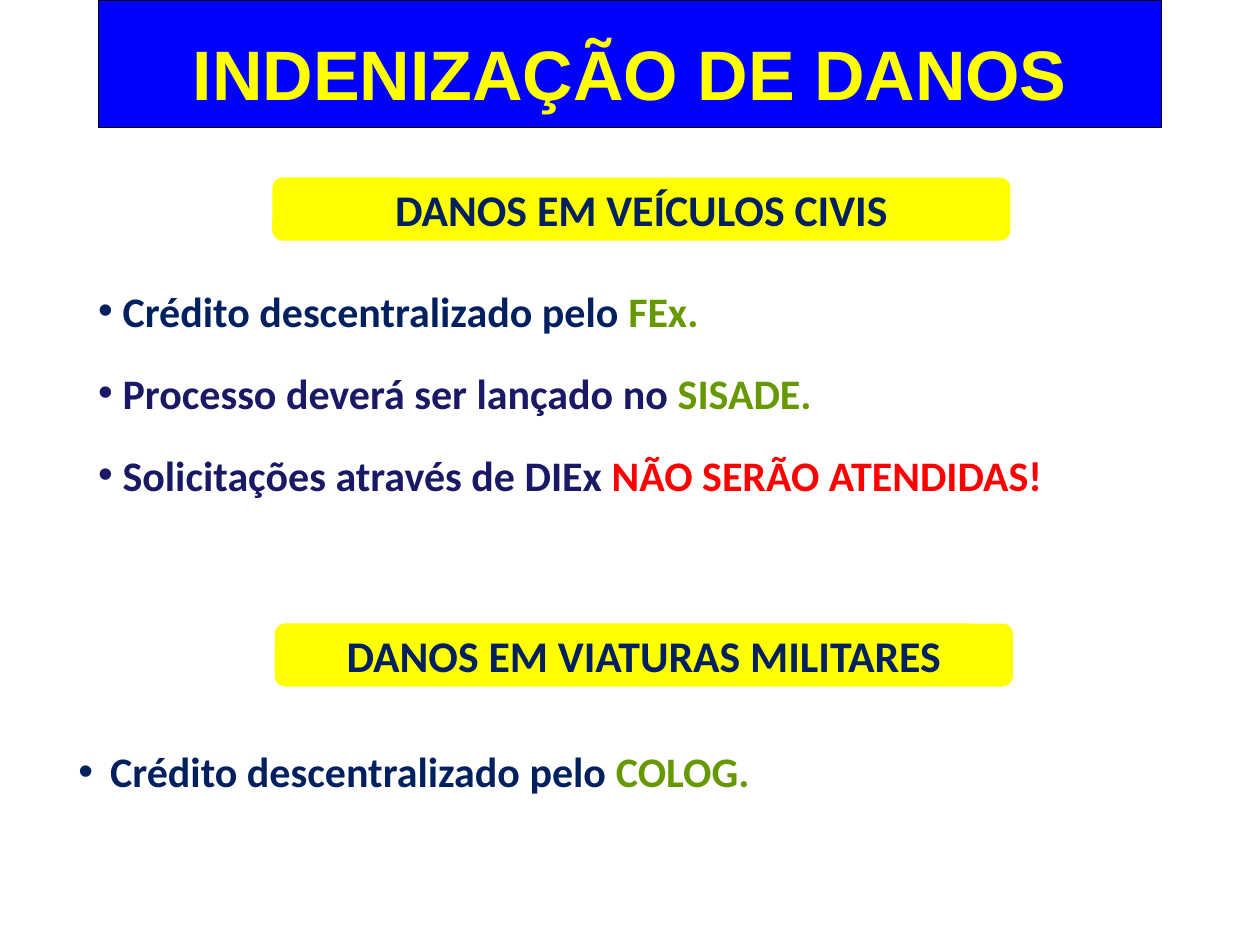
from pptx import Presentation
from pptx.dml.color import RGBColor
from pptx.enum.shapes import MSO_SHAPE
from pptx.enum.text import MSO_ANCHOR, MSO_AUTO_SIZE, PP_ALIGN
from pptx.util import Cm, Pt

BLUE = RGBColor(0x00, 0x00, 0xFF)
BLACK = RGBColor(0x00, 0x00, 0x00)
YELLOW = RGBColor(0xFF, 0xFF, 0x00)
NAVY = RGBColor(0x00, 0x20, 0x60)
INDIGO = RGBColor(0x19, 0x19, 0x66)
GREEN = RGBColor(0x66, 0x99, 0x00)
RED = RGBColor(0xFF, 0x00, 0x00)

CIVILIAN_ITEMS = [
    [("Crédito descentralizado pelo ", NAVY), ("FEx.", GREEN)],
    [("Processo deverá ser lançado no ", INDIGO), ("SISADE.", GREEN)],
    [("Solicitações através de DIEx ", INDIGO), ("NÃO SERÃO ATENDIDAS!", RED)],
]
MILITARY_ITEMS = [[("Crédito descentralizado pelo ", NAVY), ("COLOG.", GREEN)]]


def place(shape, box):
    """Move and size a shape to a (left, top, width, height) box."""
    shape.left, shape.top, shape.width, shape.height = box


def style_paragraph(paragraph, font_name, size, alignment):
    """Apply the bold text style shared by every region."""
    paragraph.alignment = alignment
    paragraph.space_before = Pt(0)
    paragraph.font.name = font_name
    paragraph.font.size = Pt(size)
    paragraph.font.bold = True


def add_title_banner(title, box, text):
    """Turn the title placeholder into the blue banner."""
    place(title, box)
    title.fill.solid()
    title.fill.fore_color.rgb = BLUE
    title.line.color.rgb = BLACK
    title.line.width = Pt(0.75)
    frame = title.text_frame
    frame.text = text
    frame.auto_size = MSO_AUTO_SIZE.NONE
    frame.vertical_anchor = MSO_ANCHOR.TOP
    frame.margin_top = Cm(0.62)
    paragraph = frame.paragraphs[0]
    style_paragraph(paragraph, "Arial", 40, PP_ALIGN.CENTER)
    paragraph.font.color.rgb = YELLOW


def add_heading(slide, box, text):
    """Add a yellow rounded section heading."""
    shape = slide.shapes.add_shape(MSO_SHAPE.ROUNDED_RECTANGLE, *box)
    shape.shadow.inherit = False
    shape.fill.solid()
    shape.fill.fore_color.rgb = YELLOW
    shape.line.fill.background()
    frame = shape.text_frame
    frame.text = text
    frame.vertical_anchor = MSO_ANCHOR.MIDDLE
    paragraph = frame.paragraphs[0]
    style_paragraph(paragraph, "Calibri", 25, PP_ALIGN.CENTER)
    paragraph.font.color.rgb = NAVY


def fill_list(body, box, items, bullet_left, text_left, anchor, line_spacing=1.0, space_after=0):
    """Fill a body placeholder with bulleted items of coloured runs."""
    place(body, box)
    frame = body.text_frame
    frame.auto_size = MSO_AUTO_SIZE.NONE
    frame.vertical_anchor = anchor
    frame.margin_left = frame.margin_right = Cm(0.23)
    for index, item in enumerate(items):
        paragraph = frame.paragraphs[0] if index == 0 else frame.add_paragraph()
        properties = paragraph._p.get_or_add_pPr()
        properties.set("marL", str(text_left))
        properties.set("indent", str(bullet_left - text_left))
        style_paragraph(paragraph, "Calibri", 24, PP_ALIGN.JUSTIFY)
        paragraph.line_spacing = line_spacing
        paragraph.space_after = Pt(space_after)
        for text, color in item:
            run = paragraph.add_run()
            run.text = text
            run.font.color.rgb = color


def main():
    """Build the damage compensation slide."""
    presentation = Presentation()
    presentation.slide_width, presentation.slide_height = Cm(25.4), Cm(19.05)
    slide = presentation.slides.add_slide(presentation.slide_layouts[3])
    title, civilian_body, military_body = slide.placeholders

    add_title_banner(title, (Cm(1.98), Cm(0), Cm(21.44), Cm(2.57)), "INDENIZAÇÃO DE DANOS")
    add_heading(slide, (Cm(5.49), Cm(3.58), Cm(14.88), Cm(1.27)), "DANOS EM VEÍCULOS CIVIS")
    fill_list(civilian_body, (Cm(1.35), Cm(5.56), Cm(22.68), Cm(4.65)), CIVILIAN_ITEMS,
              Cm(0.4), Cm(0.89), MSO_ANCHOR.TOP, 1.06, 16.4)
    add_heading(slide, (Cm(5.54), Cm(12.57), Cm(14.88), Cm(1.27)), "DANOS EM VIATURAS MILITARES")
    fill_list(military_body, (Cm(1.35), Cm(13.82), Cm(22.5), Cm(2.36)), MILITARY_ITEMS,
              Cm(0), Cm(0.64), MSO_ANCHOR.BOTTOM)

    presentation.save("out.pptx")


if __name__ == "__main__":
    main()
